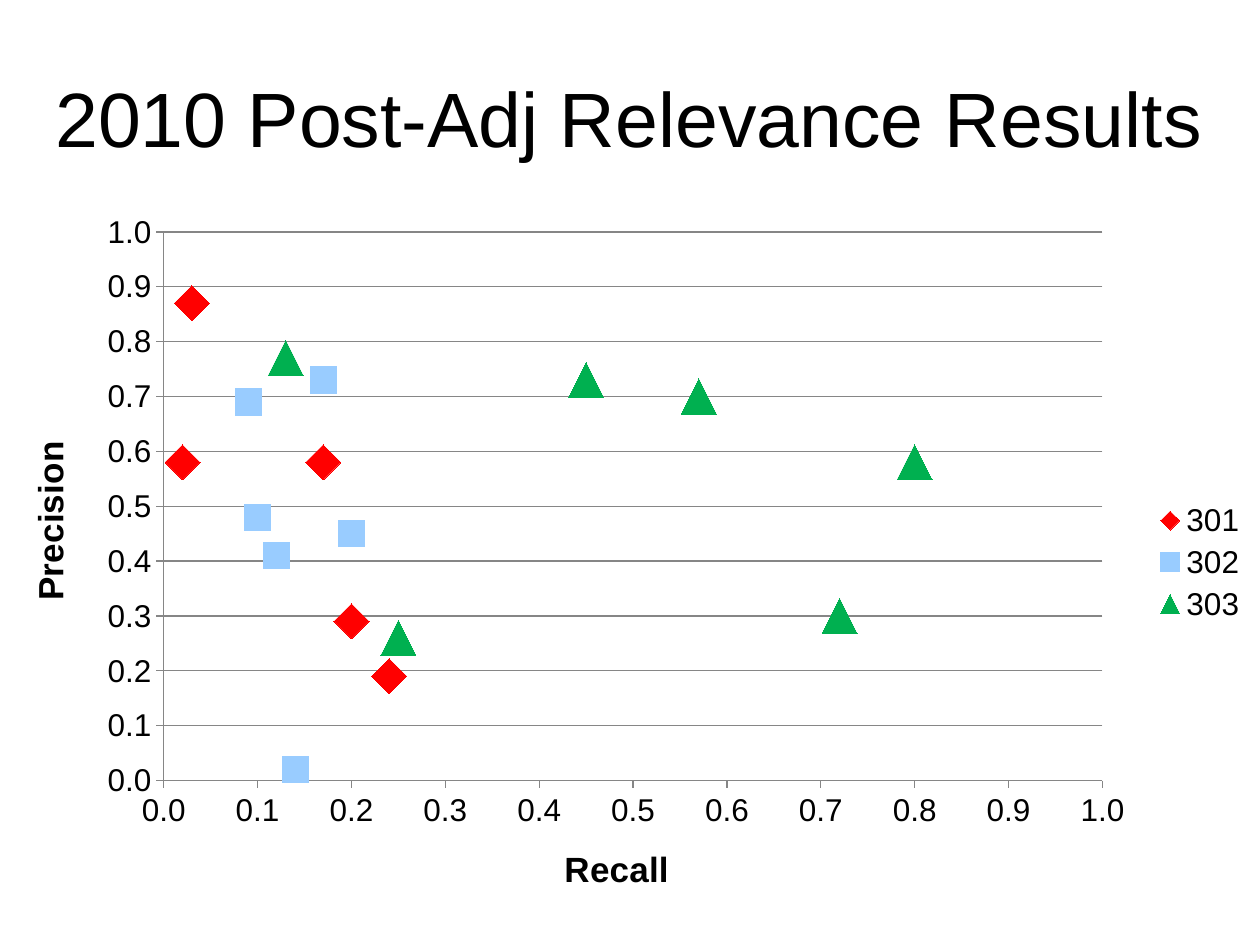
from dataclasses import dataclass

from lxml.etree import SubElement
from pptx import Presentation
from pptx.chart.data import XyChartData
from pptx.dml.color import RGBColor
from pptx.enum.chart import XL_CHART_TYPE, XL_LEGEND_POSITION, XL_MARKER_STYLE, XL_TICK_MARK
from pptx.enum.text import MSO_ANCHOR, PP_ALIGN
from pptx.oxml.ns import qn
from pptx.util import Inches, Pt


@dataclass(frozen=True)
class Theme:
    font: str = "Arial"
    text: RGBColor = RGBColor(0, 0, 0)
    axis: RGBColor = RGBColor(0x86, 0x86, 0x86)
    title_size: int = 44
    axis_title_size: int = 20
    label_size: int = 18


THEME = Theme()
WIDTH, HEIGHT = Inches(10), Inches(7.5)

# Topic: marker style, marker size, colour, (recall, precision) points
TOPICS = {
    "301": (XL_MARKER_STYLE.DIAMOND, 20, "FF0000",
            [(0.17, 0.58), (0.2, 0.29), (0.24, 0.19), (0.03, 0.87), (0.02, 0.58)]),
    "302": (XL_MARKER_STYLE.SQUARE, 15, "99CCFF",
            [(0.2, 0.45), (0.17, 0.73), (0.12, 0.41), (0.1, 0.48), (0.09, 0.69),
             (0.14, 0.02)]),
    "303": (XL_MARKER_STYLE.TRIANGLE, 20, "00B050",
            [(0.8, 0.58), (0.57, 0.7), (0.45, 0.73), (0.72, 0.3), (0.25, 0.26),
             (0.13, 0.77)]),
}


def box(left, top, width, height):
    """Turn percentages of the slide's size into lengths."""
    return (int(WIDTH * left / 100), int(HEIGHT * top / 100),
            int(WIDTH * width / 100), int(HEIGHT * height / 100))


def style_font(font, size, bold=False):
    font.name, font.size, font.bold = THEME.font, Pt(size), bold
    font.color.rgb = THEME.text


def add_title(s, text):
    tf = s.shapes.add_textbox(*box(3.3, 4, 93.3, 16.7)).text_frame
    tf.word_wrap = True
    tf.vertical_anchor = MSO_ANCHOR.MIDDLE
    p = tf.paragraphs[0]
    p.alignment = PP_ALIGN.CENTER
    r = p.add_run()
    r.text = text
    style_font(r.font, THEME.title_size)


def place(part, x, y, w=None, h=None):
    """Fix a chart part at percentages of the chart's size."""
    layout = part.find(qn("c:layout"))
    if layout is None:
        layout = part.makeelement(qn("c:layout"))
        overlay = part.find(qn("c:overlay"))
        part.insert(0 if overlay is None else part.index(overlay), layout)
    for child in list(layout):
        layout.remove(child)
    manual = SubElement(layout, qn("c:manualLayout"))
    settings = [("xMode", "edge"), ("yMode", "edge"), ("x", x / 100), ("y", y / 100)]
    if w is not None:
        settings = [("layoutTarget", "inner"), *settings, ("w", w / 100), ("h", h / 100)]
    for name, value in settings:
        SubElement(manual, qn(f"c:{name}")).set("val", str(value))


def style_axis(axis, title, gridlines):
    axis.minimum_scale, axis.maximum_scale, axis.major_unit = 0, 1, 0.1
    axis.major_tick_mark = XL_TICK_MARK.OUTSIDE
    axis.minor_tick_mark = XL_TICK_MARK.NONE
    axis.has_major_gridlines = gridlines
    lines = [axis.format.line]
    if gridlines:
        lines.append(axis.major_gridlines.format.line)
    for line in lines:
        line.color.rgb, line.width = THEME.axis, Pt(0.75)
    labels = axis.tick_labels
    labels.number_format, labels.number_format_is_linked = "0.0", False
    style_font(labels.font, THEME.label_size)
    r = axis.axis_title.text_frame.paragraphs[0].add_run()
    r.text = title
    style_font(r.font, THEME.axis_title_size, bold=True)


def style_series(series, style, size, color):
    series.format.line.fill.background()
    marker = series.marker
    marker.style, marker.size = style, size
    marker.format.fill.solid()
    marker.format.fill.fore_color.rgb = RGBColor.from_string(color)
    marker.format.line.fill.background()


def scatter_data():
    """Give every topic the same recall column, blank where a row is not its own."""
    data = XyChartData()
    rows = [(topic, *point) for topic, (*_, points) in TOPICS.items() for point in points]
    for topic in TOPICS:
        series = data.add_series(topic)
        for owner, recall, precision in rows:
            series.add_data_point(recall, precision if owner == topic else None)
    return data


def share_recall_column(chart):
    """Point every series at the first one's recall cells."""
    refs = [x.find(".//" + qn("c:f")) for x in chart.element.iter(qn("c:xVal"))]
    for ref in refs[1:]:
        ref.text = refs[0].text


def add_scatter(s):
    chart = s.shapes.add_chart(XL_CHART_TYPE.XY_SCATTER,
                               *box(0, 21.1, 100, 76.7), scatter_data()).chart
    share_recall_column(chart)
    chart.has_title = False
    style_font(chart.font, THEME.label_size)
    style_axis(chart.category_axis, "Recall", gridlines=False)
    style_axis(chart.value_axis, "Precision", gridlines=True)
    plot = chart.plots[0]
    plot.vary_by_categories = False
    for series, (style, size, color, _) in zip(plot.series, TOPICS.values()):
        style_series(series, style, size, color)

    chart.has_legend = True
    legend = chart.legend
    legend.position = XL_LEGEND_POSITION.RIGHT
    legend.include_in_layout = False
    style_font(legend.font, THEME.label_size)

    place(next(chart.element.iter(qn("c:plotArea"))), 13, 4.5, 74.5, 75.7)
    place(next(chart.element.iter(qn("c:legend"))), 91.3, 41)
    place(chart.category_axis.axis_title.element, 44.3, 88.5)
    place(chart.value_axis.axis_title.element, 1.7, 32.5)


def main():
    prs = Presentation()
    prs.slide_width, prs.slide_height = WIDTH, HEIGHT
    s = prs.slides.add_slide(prs.slide_layouts[6])
    add_title(s, "2010 Post-Adj Relevance Results")
    add_scatter(s)
    prs.save("out.pptx")


if __name__ == "__main__":
    main()
